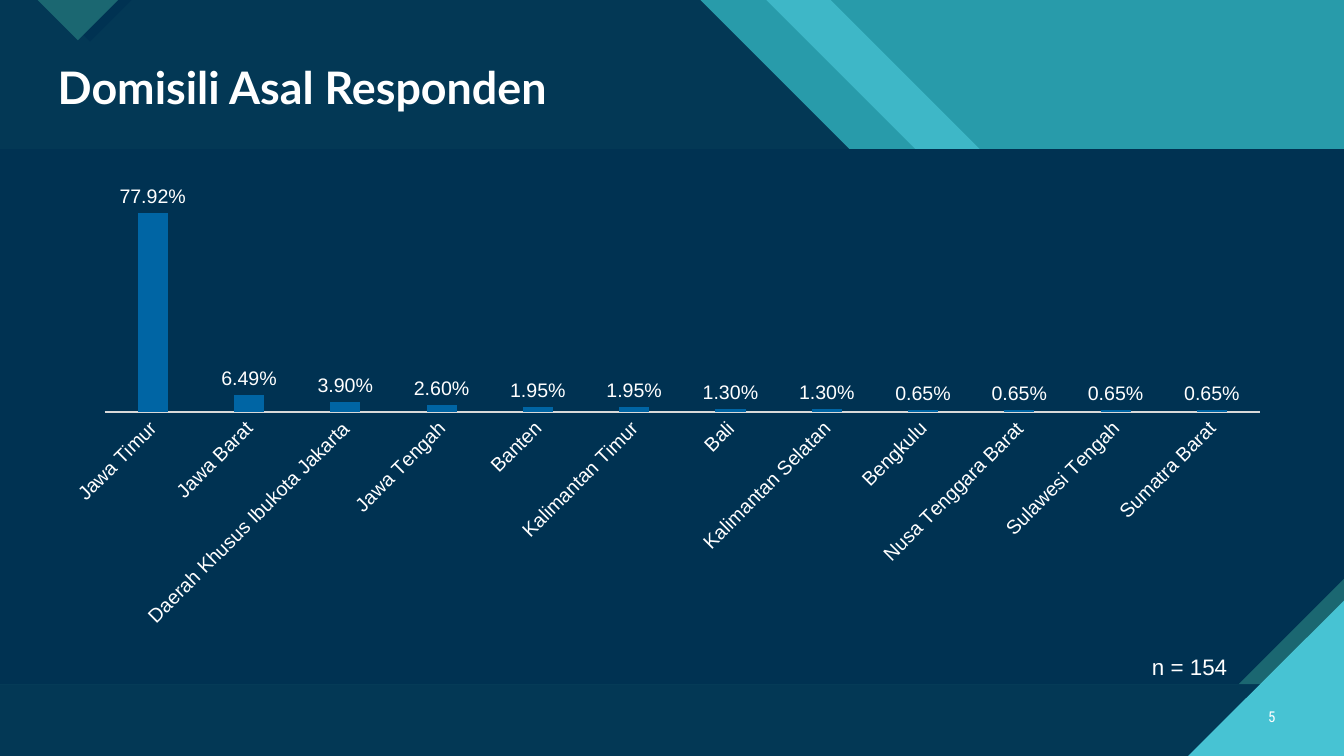
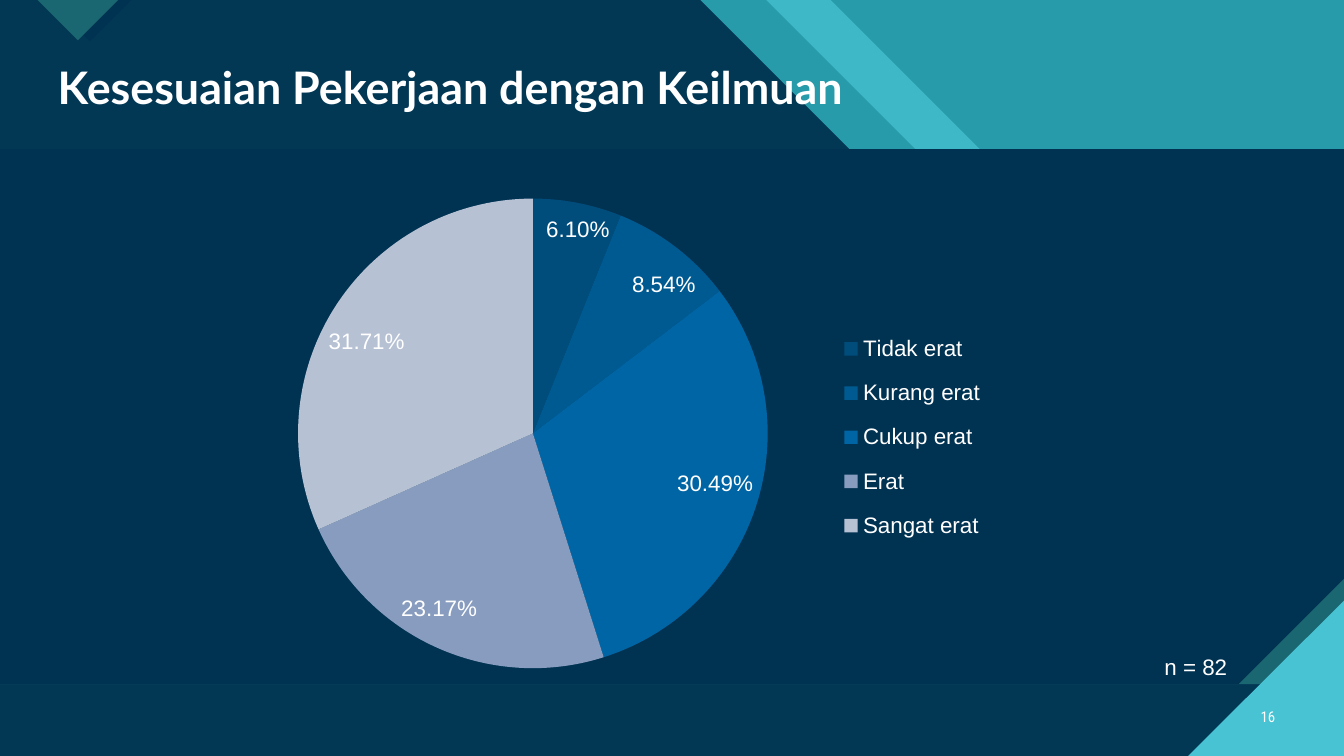
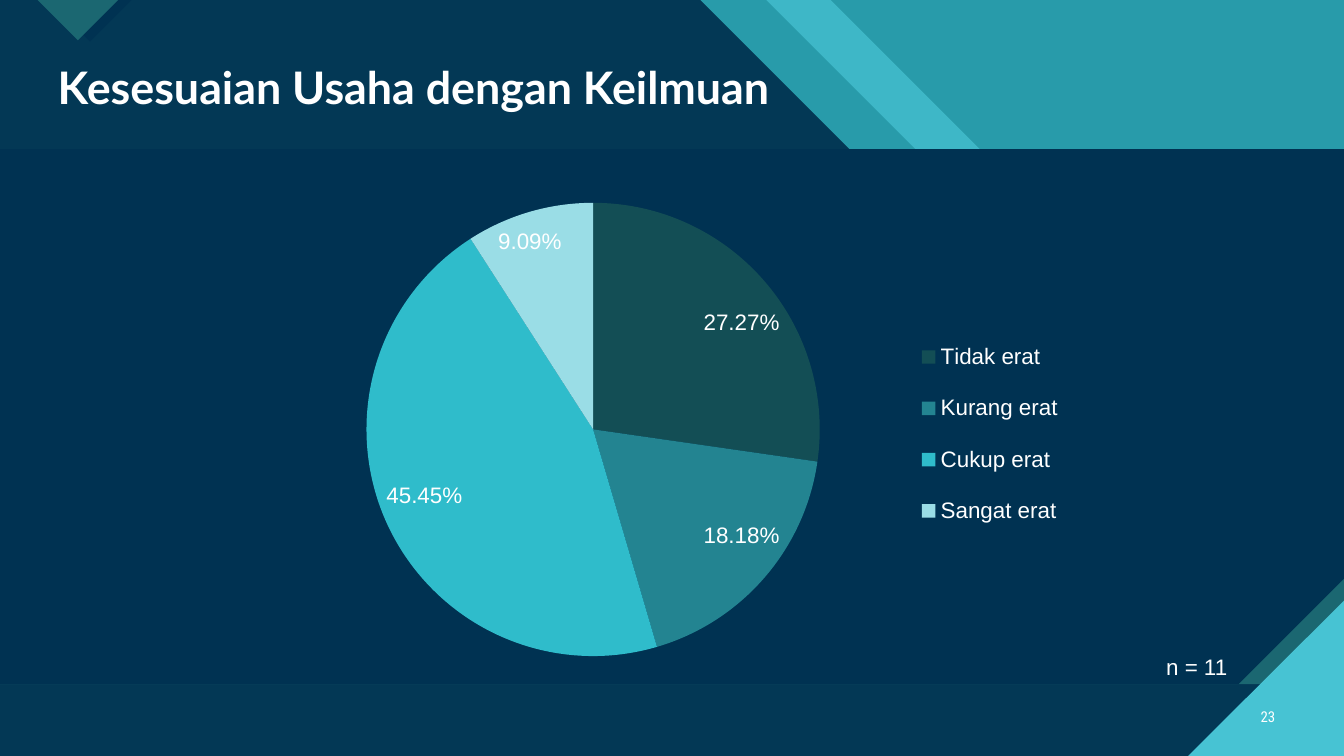
from lxml import etree
from pptx import Presentation
from pptx.chart.data import CategoryChartData
from pptx.dml.color import RGBColor
from pptx.enum.chart import XL_CHART_TYPE, XL_LABEL_POSITION, XL_LEGEND_POSITION, XL_TICK_MARK
from pptx.enum.shapes import MSO_SHAPE
from pptx.enum.text import MSO_ANCHOR, PP_ALIGN
from pptx.oxml.ns import qn
from pptx.util import Inches, Pt

COLUMN, PIE = XL_CHART_TYPE.COLUMN_CLUSTERED, XL_CHART_TYPE.PIE
OUTSIDE_END, BEST_FIT = XL_LABEL_POSITION.OUTSIDE_END, XL_LABEL_POSITION.BEST_FIT
LEGEND_RIGHT = XL_LEGEND_POSITION.RIGHT
NO_TICK = XL_TICK_MARK.NONE
RECTANGLE, SNIP_CORNER = MSO_SHAPE.RECTANGLE, MSO_SHAPE.SNIP_1_RECTANGLE
TOP, MIDDLE = MSO_ANCHOR.TOP, MSO_ANCHOR.MIDDLE
LEFT, RIGHT = PP_ALIGN.LEFT, PP_ALIGN.RIGHT

WHITE = RGBColor(0xFF, 0xFF, 0xFF)
NAVY = RGBColor(0x00, 0x32, 0x52)
PINE = RGBColor(0x1B, 0x67, 0x71)
TEAL = RGBColor(0x28, 0x9B, 0xAA)
AQUA = RGBColor(0x47, 0xC3, 0xD3)
AXIS_GREY = RGBColor(0xD9, 0xD9, 0xD9)
BLUE = RGBColor(0x00, 0x65, 0xA4)
BLUES = [RGBColor(0x00, 0x4D, 0x7C), RGBColor(0x00, 0x5A, 0x92), BLUE,
         RGBColor(0x87, 0x9C, 0xBE), RGBColor(0xB6, 0xC1, 0xD4)]
TEALS = [RGBColor(0x13, 0x4E, 0x55), RGBColor(0x23, 0x84, 0x91),
         RGBColor(0x2F, 0xBC, 0xCB), RGBColor(0x9A, 0xDD, 0xE6)]

WIDTH = 10
HEIGHT = WIDTH * 9 / 16
CARD = (0, 1.11, WIDTH, 3.98)
PERCENT = "0.00%"

PROVINCES = {
    "Jawa Timur": 0.7792,
    "Jawa Barat": 0.0649,
    "Daerah Khusus Ibukota Jakarta": 0.039,
    "Jawa Tengah": 0.026,
    "Banten": 0.0195,
    "Kalimantan Timur": 0.0195,
    "Bali": 0.013,
    "Kalimantan Selatan": 0.013,
    "Bengkulu": 0.0065,
    "Nusa Tenggara Barat": 0.0065,
    "Sulawesi Tengah": 0.0065,
    "Sumatra Barat": 0.0065,
}
JOB_FIT = {"Tidak erat": 0.061, "Kurang erat": 0.0854, "Cukup erat": 0.3049,
           "Erat": 0.2317, "Sangat erat": 0.3171}
BUSINESS_FIT = {"Tidak erat": 0.2727, "Kurang erat": 0.1818,
                "Cukup erat": 0.4545, "Sangat erat": 0.0909}


class SurveyDeck:
    """Survey slides with a shared diagonal header, a dark card and a corner number."""

    def __init__(self):
        self.deck = Presentation()
        self.deck.slide_width, self.deck.slide_height = Inches(WIDTH), Inches(HEIGHT)
        self.slide = None

    def add_slide(self, title, number, respondents):
        self.slide = self.deck.slides.add_slide(self.deck.slide_layouts[6])
        backdrop = self.slide.background.fill
        backdrop.solid()
        backdrop.fore_color.rgb = AQUA
        self.preset(RECTANGLE, (0, 0, WIDTH, HEIGHT), TEAL)
        self.diagonal(6.18, AQUA, 72)
        self.diagonal(5.7, TEAL)
        self.diagonal(5.21, PINE)
        self.diagonal(5.21, NAVY, 88)
        self.polygon([(0.98, 0), (0.67, 0.31), (0.36, 0)], NAVY)
        self.polygon([(0.28, 0), (0.58, 0.3), (0.88, 0)], PINE)
        self.card(PINE, 0)
        self.card(NAVY, 0.197)
        self.polygon([(8.84, HEIGHT), (WIDTH, HEIGHT), (WIDTH, 4.47)], AQUA)
        self.text(title, (0.36, 0.45, 9.2, 0.44), 24, "Lato", bold=True, spacing=0.9)
        self.text(number, (9.23, 5.18, 0.33, 0.3), 8, "Roboto Condensed",
                  align=RIGHT, anchor=MIDDLE)
        self.text(f"n = {respondents}", (8.28, 4.81, 0.95, 0.3), 12, "Arial",
                  align=RIGHT, inset=(0.1, 0.05))

    def paint(self, shape, color, opacity=100):
        shape.shadow.inherit = False
        shape.fill.solid()
        shape.fill.fore_color.rgb = color
        shape.line.fill.background()
        if opacity < 100:
            tint = next(shape.element.iter(qn("a:srgbClr")))
            etree.SubElement(tint, qn("a:alpha")).set("val", str(opacity * 1000))

    def preset(self, kind, box, color):
        shape = self.slide.shapes.add_shape(kind, *map(Inches, box))
        self.paint(shape, color)
        return shape

    def card(self, color, snip):
        card = self.preset(SNIP_CORNER, CARD, color)
        card.adjustments[0] = snip
        card.rotation = 180
        card.element.spPr.find(qn("a:xfrm")).set("flipH", "1")

    def polygon(self, points, color, opacity=100):
        start, *others = [(Inches(x), Inches(y)) for x, y in points]
        outline = self.slide.shapes.build_freeform(*start)
        outline.add_line_segments(others, close=True)
        self.paint(outline.convert_to_shape(), color, opacity)

    def diagonal(self, edge, color, opacity=100):
        step = 2.23
        notch = edge + 3.18
        self.polygon([(0, 0), (edge, 0), (edge + step, step), (notch, step),
                      (WIDTH, step + WIDTH - notch), (WIDTH, HEIGHT), (0, HEIGHT)],
                     color, opacity)

    def text(self, words, box, size, font, bold=False, align=LEFT, anchor=TOP,
             inset=(0.07, 0.04), spacing=None):
        frame = self.slide.shapes.add_textbox(*map(Inches, box)).text_frame
        frame.word_wrap = True
        frame.vertical_anchor = anchor
        frame.margin_left = frame.margin_right = Inches(inset[0])
        frame.margin_top = frame.margin_bottom = Inches(inset[1])
        paragraph = frame.paragraphs[0]
        paragraph.alignment = align
        paragraph.line_spacing = spacing
        run = paragraph.add_run()
        run.text = words
        self.style_font(run.font, size, font)
        run.font.bold = bold

    def style_font(self, font, size, name="Arial"):
        font.size, font.name = Pt(size), name
        font.color.rgb = WHITE

    def chart(self, kind, shares, box, size, label_position):
        data = CategoryChartData(number_format=PERCENT)
        data.categories = list(shares)
        data.add_series("Series 1", list(shares.values()))
        chart = self.slide.shapes.add_chart(kind, *map(Inches, box), data).chart
        chart.has_title = False
        chart.has_legend = kind == PIE
        self.style_font(chart.font, size)
        plot = chart.plots[0]
        plot.vary_by_categories = kind == PIE
        labels = plot.series[0].data_labels
        labels.show_value = True
        labels.number_format, labels.number_format_is_linked = PERCENT, False
        labels.position = label_position
        self.style_font(labels.font, size)
        return chart

    def columns(self, shares, box):
        chart = self.chart(COLUMN, shares, box, 10.5, OUTSIDE_END)
        plot = chart.plots[0]
        plot.gap_width, plot.overlap = 219, -27
        bars = plot.series[0].format.fill
        bars.solid()
        bars.fore_color.rgb = BLUE
        values = chart.value_axis
        values.minimum_scale, values.maximum_scale = 0, 1
        values.has_major_gridlines = False
        values.visible = False
        names = chart.category_axis
        names.major_tick_mark = names.minor_tick_mark = NO_TICK
        names.format.line.color.rgb = AXIS_GREY
        names.format.line.width = Pt(0.75)
        self.style_font(names.tick_labels.font, 10.5)
        next(names._element.iter(qn("a:bodyPr"))).set("rot", "-2700000")

    def pie(self, shares, box, colors, legend_box):
        chart = self.chart(PIE, shares, box, 12, BEST_FIT)
        chart.legend.position = LEGEND_RIGHT
        chart.legend.include_in_layout = False
        self.style_font(chart.legend.font, 12)
        self.place_legend(chart.legend, legend_box)
        for index, color in enumerate(colors):
            wedge = chart.plots[0].series[0].points[index].format
            wedge.fill.solid()
            wedge.fill.fore_color.rgb = color
            wedge.line.fill.background()

    def place_legend(self, legend, fractions):
        element = legend._element
        layout = element.find(qn("c:layout"))
        if layout is None:
            layout = etree.Element(qn("c:layout"))
            element.find(qn("c:legendPos")).addnext(layout)
        manual = etree.SubElement(layout, qn("c:manualLayout"))
        settings = [("xMode", "edge"), ("yMode", "edge"), *zip("xywh", fractions)]
        for tag, value in settings:
            etree.SubElement(manual, qn(f"c:{tag}")).set("val", str(value))


def main():
    survey = SurveyDeck()
    survey.add_slide("Domisili Asal Responden", "5", 154)
    survey.columns(PROVINCES, (0.36, 1.09, 9.2, 3.65))
    survey.add_slide("Kesesuaian Pekerjaan dengan Keilmuan", "16", 82)
    survey.pie(JOB_FIT, (1.04, 1.12, 7.23, 3.99), BLUES, (0.71, 0.31, 0.17, 0.45))
    survey.add_slide("Kesesuaian Usaha dengan Keilmuan", "23", 11)
    survey.pie(BUSINESS_FIT, (1.75, 1.17, 6.53, 3.85), TEALS, (0.77, 0.31, 0.18, 0.45))
    survey.deck.save("out.pptx")


if __name__ == "__main__":
    main()
